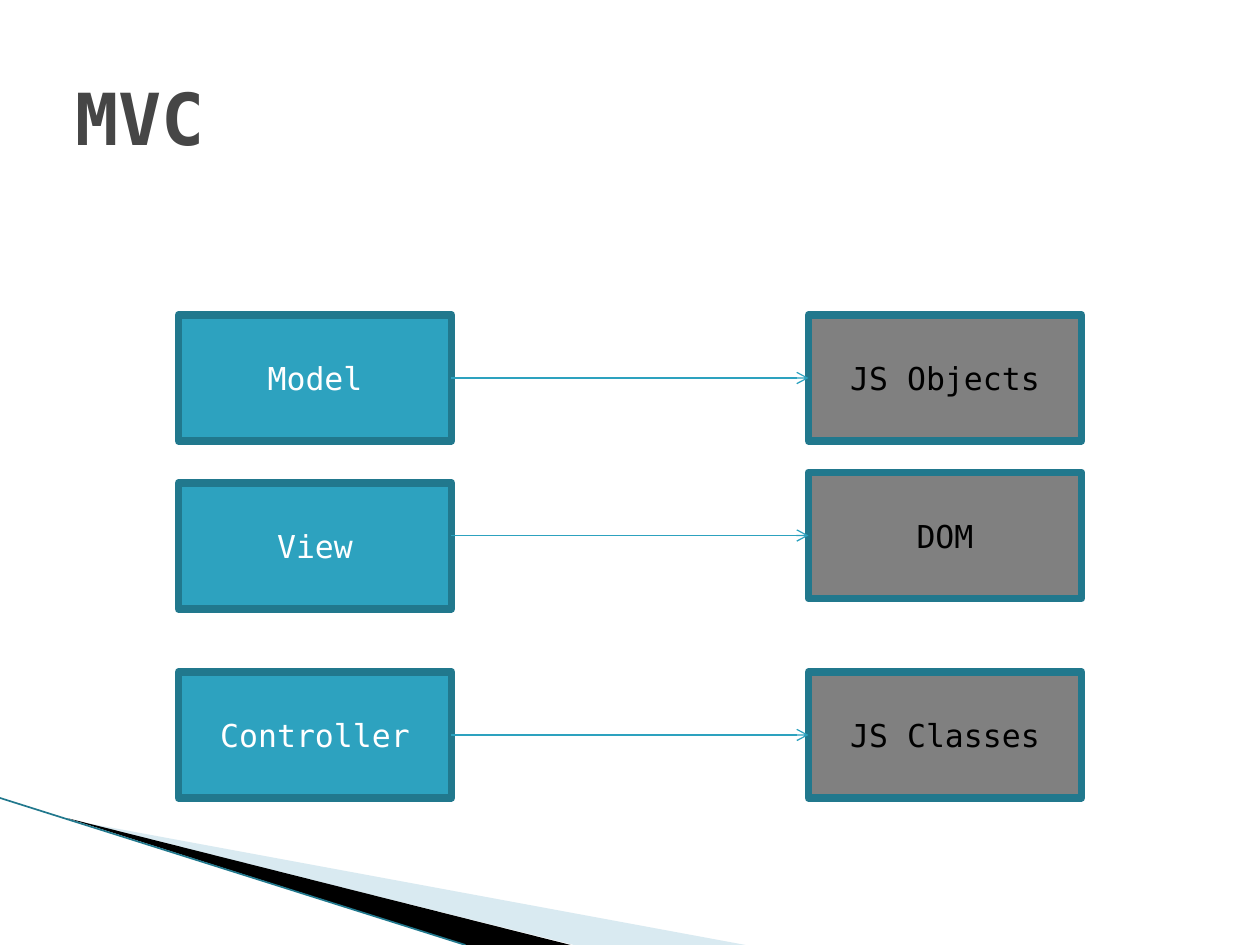
from lxml import etree
from pptx import Presentation
from pptx.dml.color import RGBColor
from pptx.enum import shapes, text
from pptx.oxml.ns import qn
from pptx.util import Pt

FONT = "DejaVu Sans Mono"
TEAL, DARK_TEAL, GRAY = "2DA2BF", "21788D", "808080"
BOX_W, BOX_H = 156, 72
LEFT_X, RIGHT_X = 102, 462


def color(value):
    return RGBColor.from_string(value)


def write(sp, content, size=18, fill="000000", bold=False,
          align=text.PP_ALIGN.CENTER):
    tf = sp.text_frame
    tf.word_wrap = True
    tf.vertical_anchor = text.MSO_ANCHOR.MIDDLE
    p = tf.paragraphs[0]
    p.alignment = align
    r = p.add_run()
    r.text = content
    r.font.name = FONT
    r.font.size = Pt(size)
    r.font.bold = bold
    r.font.color.rgb = color(fill)


def add_box(s, x, y, label, fill, font_color):
    sp = s.shapes.add_shape(shapes.MSO_SHAPE.RECTANGLE,
                            Pt(x), Pt(y), Pt(BOX_W), Pt(BOX_H))
    sp.shadow.inherit = False
    sp.fill.solid()
    sp.fill.fore_color.rgb = color(fill)
    sp.line.color.rgb = color(DARK_TEAL)
    sp.line.width = Pt(4.33)
    write(sp, label, fill=font_color)
    return sp


def add_line(s, x1, y1, x2, y2, stroke, width, arrow=False):
    line = s.shapes.add_connector(shapes.MSO_CONNECTOR.STRAIGHT,
                                  Pt(x1), Pt(y1), Pt(x2), Pt(y2))
    line.line.color.rgb = color(stroke)
    line.line.width = Pt(width)
    if arrow:
        etree.SubElement(line.line._get_or_add_ln(), qn("a:tailEnd"), type="arrow")
    etree.SubElement(line._element.spPr, qn("a:effectLst"))
    return line


def add_wedge(s, points, fill, alpha=100):
    start, *rest = [(Pt(x), Pt(y)) for x, y in points]
    builder = s.shapes.build_freeform(*start)
    builder.add_line_segments(rest, close=True)
    sp = builder.convert_to_shape()
    sp.shadow.inherit = False
    sp.fill.solid()
    sp.fill.fore_color.rgb = color(fill)
    sp.line.fill.background()
    if alpha < 100:
        clr = sp._element.spPr.find(qn("a:solidFill"))[0]
        etree.SubElement(clr, qn("a:alpha"), val=str(alpha * 1000))


def main():
    prs = Presentation()
    prs.slide_width, prs.slide_height = Pt(720), Pt(540)
    s = prs.slides.add_slide(prs.slide_layouts[6])

    # Corner decoration
    add_wedge(s, [(39.6, 468.5), (426, 540), (328, 540)], "A0CBDC", alpha=40)
    add_wedge(s, [(38.2, 467.5), (326, 540), (266, 540)], "000000")
    add_line(s, 0, 456, 266, 540, DARK_TEAL, 0.95)

    # Title
    title = s.shapes.add_textbox(Pt(36), Pt(21.6), Pt(648), Pt(90))
    write(title, "MVC", size=41, fill="464646", bold=True,
          align=text.PP_ALIGN.LEFT)

    # Each MVC part with its JavaScript counterpart
    rows = [("Model", 180, "JS Objects", 180),
            ("View", 276, "DOM", 270),
            ("Controller", 384, "JS Classes", 384)]
    for part, part_y, target, target_y in rows:
        left = add_box(s, LEFT_X, part_y, part, TEAL, "FFFFFF")
        right = add_box(s, RIGHT_X, target_y, target, GRAY, "000000")
        y = target_y + BOX_H / 2
        arrow = add_line(s, LEFT_X + BOX_W, y, RIGHT_X, y, TEAL, 0.75, arrow=True)
        if part_y == target_y:
            arrow.begin_connect(left, 3)
        arrow.end_connect(right, 1)

    prs.save("out.pptx")


if __name__ == "__main__":
    main()
